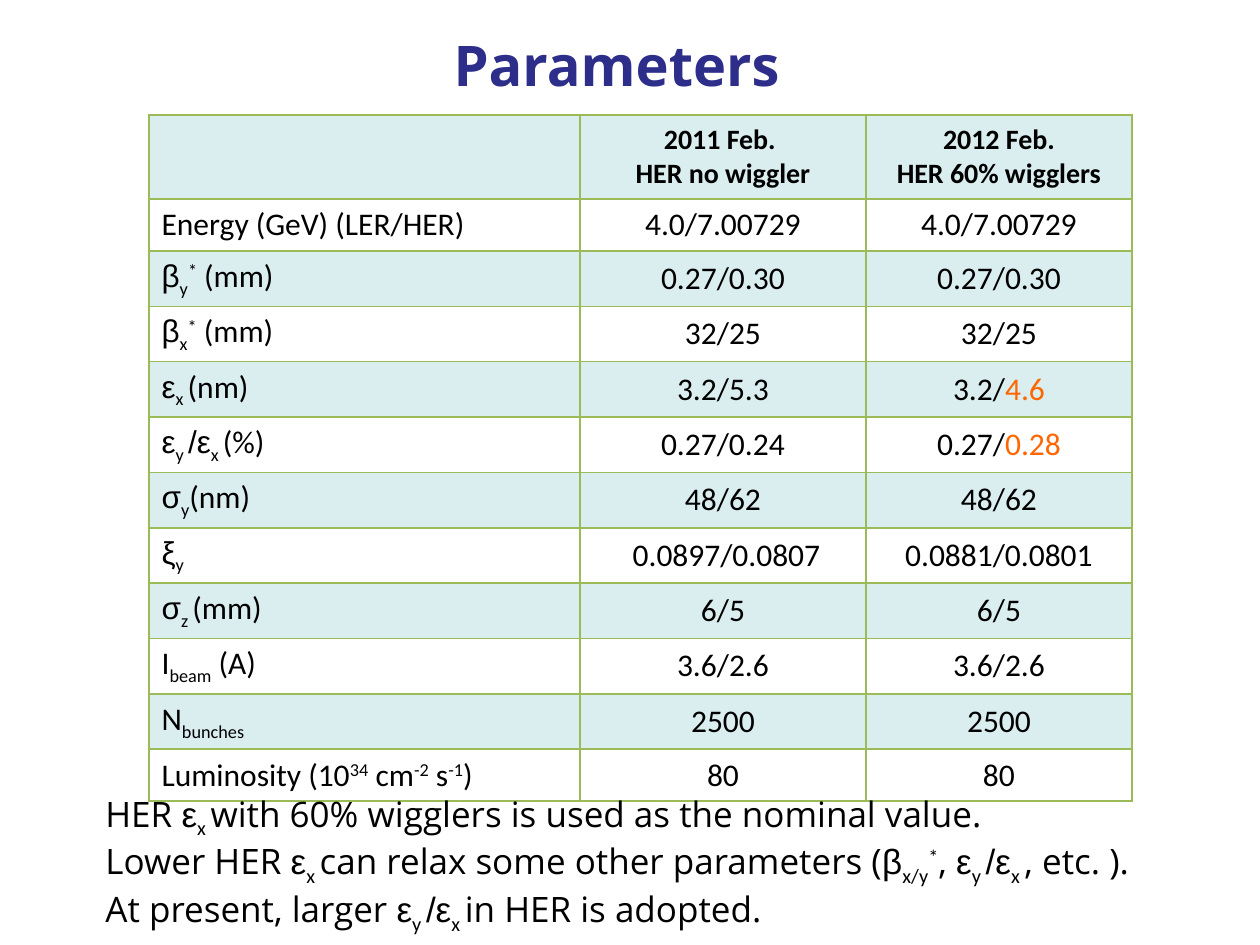
from dataclasses import dataclass
from typing import NamedTuple

import pptx
import pptx.dml.color
import pptx.enum.text
import pptx.oxml
import pptx.oxml.ns
import pptx.util

PX_PER_INCH = 126


@dataclass(frozen=True)
class Theme:
    title: str = "2D2D8A"
    text: str = "000000"
    accent: str = "FF6600"
    band: str = "DAEDEF"
    border: str = "9BBB59"
    title_size: int = 32
    header_size: int = 16
    cell_size: int = 18
    note_size: int = 20
    body_font: str = "Calibri"
    note_font: str = "Open Sans"
    greek_font: str = "Arial"


THEME = Theme()
ALIGN = pptx.enum.text.PP_ALIGN
MIDDLE = pptx.enum.text.MSO_ANCHOR.MIDDLE


class Run(NamedTuple):
    text: str
    font: str = THEME.body_font
    baseline: int = 0
    color: str = THEME.text


class Row(NamedTuple):
    label: list[Run]
    before: list[Run]
    after: list[Run]


def px(length: int) -> pptx.util.Emu:
    return pptx.util.Emu(round(length * pptx.util.Inches(1) / PX_PER_INCH))


def greek(text: str) -> Run:
    return Run(text, THEME.greek_font)


def sub(text: str) -> Run:
    return Run(text, baseline=-25000)


def sup(text: str) -> Run:
    return Run(text, baseline=30000)


def note(text: str) -> Run:
    return Run(text, THEME.note_font)


def accent(text: str) -> Run:
    return Run(text, color=THEME.accent)


EPSILON_X = [greek("ε"), sub("x ")]
EPSILON_RATIO = [greek("ε"), sub("y "), greek("/ε"), sub("x ")]


def same(label: list[Run], value: str) -> Row:
    return Row(label, [Run(value)], [Run(value)])


HEADERS = [
    [],
    ["2011 Feb. ", "HER no wiggler"],
    ["2012 Feb.", "HER 60% wigglers"],
]
ROWS = [
    same([Run("Energy (GeV) (LER/HER)")], "4.0/7.00729"),
    same([greek("β"), sub("y"), sup("*"), Run(" (mm)")], "0.27/0.30"),
    same([greek("β"), sub("x"), sup("*"), Run(" (mm)")], "32/25"),
    Row([*EPSILON_X, Run("(nm)")], [Run("3.2/5.3")], [Run("3.2/"), accent("4.6")]),
    Row([*EPSILON_RATIO, Run("(%)")], [Run("0.27/0.24")], [Run("0.27/"), accent("0.28")]),
    same([greek("σ"), sub("y"), Run("(nm)")], "48/62"),
    Row([greek("ξ"), sub("y")], [Run(" 0.0897/0.0807")], [Run("0.0881/0.0801")]),
    same([greek("σ"), sub("z "), Run("(mm)")], "6/5"),
    same([Run("I"), sub("beam"), Run(" (A)")], "3.6/2.6"),
    same([Run("N"), sub("bunches")], "2500"),
    same([Run("Luminosity (10"), sup("34"), Run(" cm"), sup("-2"),
          Run(" s"), sup("-1"), Run(")")], "80"),
]
NOTES = [
    [note("HER "), *EPSILON_X, note("with 60% wigglers is used as the nominal value.")],
    [note("Lower HER "), *EPSILON_X, note("can relax some other parameters ("),
     greek("β"), sub("x/y"), sup("*"), note(", "), *EPSILON_RATIO, note(", etc. ).")],
    [note("At present, larger "), *EPSILON_RATIO, note("in HER is adopted.")],
]
COLUMN_WIDTHS = [431, 286, 266]
HEADER_HEIGHT = 84
ROW_HEIGHT = 52


def write(frame, paragraphs: list[list[Run]], size: int, align, bold: bool = False,
          hanging: int = 0) -> None:
    for index, runs in enumerate(paragraphs):
        paragraph = frame.add_paragraph() if index else frame.paragraphs[0]
        paragraph.alignment = align
        if hanging:
            properties = paragraph._p.get_or_add_pPr()
            for name, value in {"marL": hanging, "indent": -hanging}.items():
                properties.set(name, str(px(value)))
        for item in runs:
            run = paragraph.add_run()
            run.text = item.text
            formats = {"name": item.font, "size": pptx.util.Pt(size), "bold": bold}
            for name, value in formats.items():
                setattr(run.font, name, value)
            run.font.color.rgb = pptx.dml.color.RGBColor.from_string(item.color)
            if item.baseline:
                run._r.get_or_add_rPr().set("baseline", str(item.baseline))


def style_cell(cell, banded: bool) -> None:
    cell.vertical_anchor = MIDDLE
    properties = cell._tc.get_or_add_tcPr()
    for side in ("lnL", "lnR", "lnT", "lnB"):
        properties.append(pptx.oxml.parse_xml(
            f'<a:{side} {pptx.oxml.ns.nsdecls("a")} w="{pptx.util.Pt(1)}">'
            f'<a:solidFill><a:srgbClr val="{THEME.border}"/></a:solidFill></a:{side}>'))
    if banded:
        cell.fill.solid()
        cell.fill.fore_color.rgb = pptx.dml.color.RGBColor.from_string(THEME.band)
    else:
        cell.fill.background()


def place(shape, left: int, top: int, width: int, height: int) -> None:
    bounds = {"left": left, "top": top, "width": width, "height": height}
    for name, value in bounds.items():
        setattr(shape, name, px(value))


def add_title(slide) -> None:
    title = slide.shapes.title
    place(title, 120, 38, 1008, 53)
    title.text_frame.vertical_anchor = MIDDLE
    write(title.text_frame, [[Run("Parameters ", THEME.note_font, color=THEME.title)]],
          THEME.title_size, ALIGN.CENTER, bold=True)


def add_parameter_table(slide) -> None:
    heights = [HEADER_HEIGHT] + [ROW_HEIGHT] * len(ROWS)
    table = slide.shapes.add_table(
        len(heights), len(COLUMN_WIDTHS), px(149), px(115),
        px(sum(COLUMN_WIDTHS)), px(sum(heights))).table
    for name in ("first_row", "horz_banding"):
        setattr(table, name, False)
    for column, width in zip(table.columns, COLUMN_WIDTHS):
        column.width = px(width)
    for row, height in zip(table.rows, heights):
        row.height = px(height)
    for column, lines in enumerate(HEADERS):
        cell = table.cell(0, column)
        style_cell(cell, banded=True)
        write(cell.text_frame, [[Run(line)] for line in lines],
              THEME.header_size, ALIGN.CENTER, bold=True)
    for index, row in enumerate(ROWS, start=1):
        for column, runs in enumerate(row):
            cell = table.cell(index, column)
            style_cell(cell, banded=index % 2 == 0)
            align = ALIGN.CENTER if column else ALIGN.LEFT
            write(cell.text_frame, [runs], THEME.cell_size, align)


def add_notes_text(slide) -> None:
    box = slide.shapes.add_textbox(px(93), px(786), px(1113), px(140))
    box.text_frame.word_wrap = True
    write(box.text_frame, NOTES, THEME.note_size, ALIGN.LEFT, hanging=63)


def main() -> None:
    presentation = pptx.Presentation()
    presentation.slide_width = px(1260)
    presentation.slide_height = px(945)
    slide = presentation.slides.add_slide(presentation.slide_layouts.get_by_name("Title Only"))
    add_title(slide)
    add_parameter_table(slide)
    add_notes_text(slide)
    presentation.save("out.pptx")


if __name__ == "__main__":
    main()
